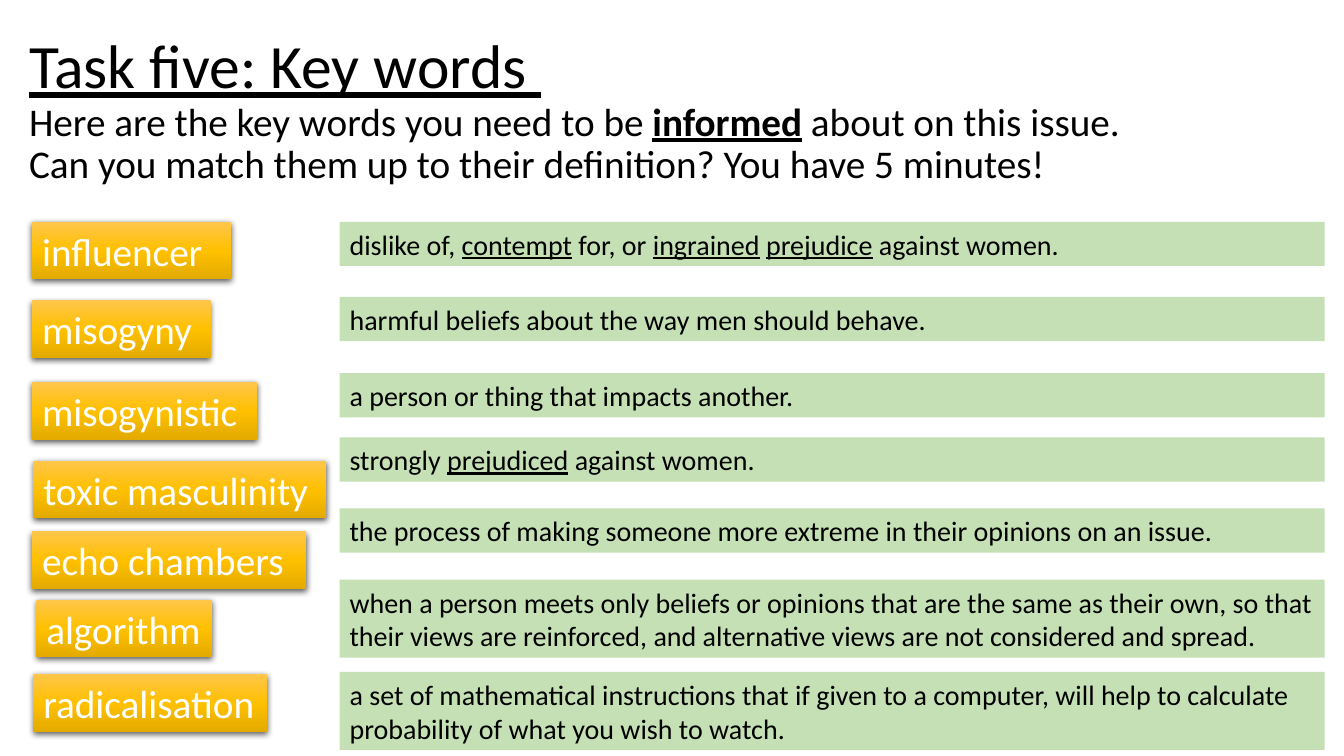
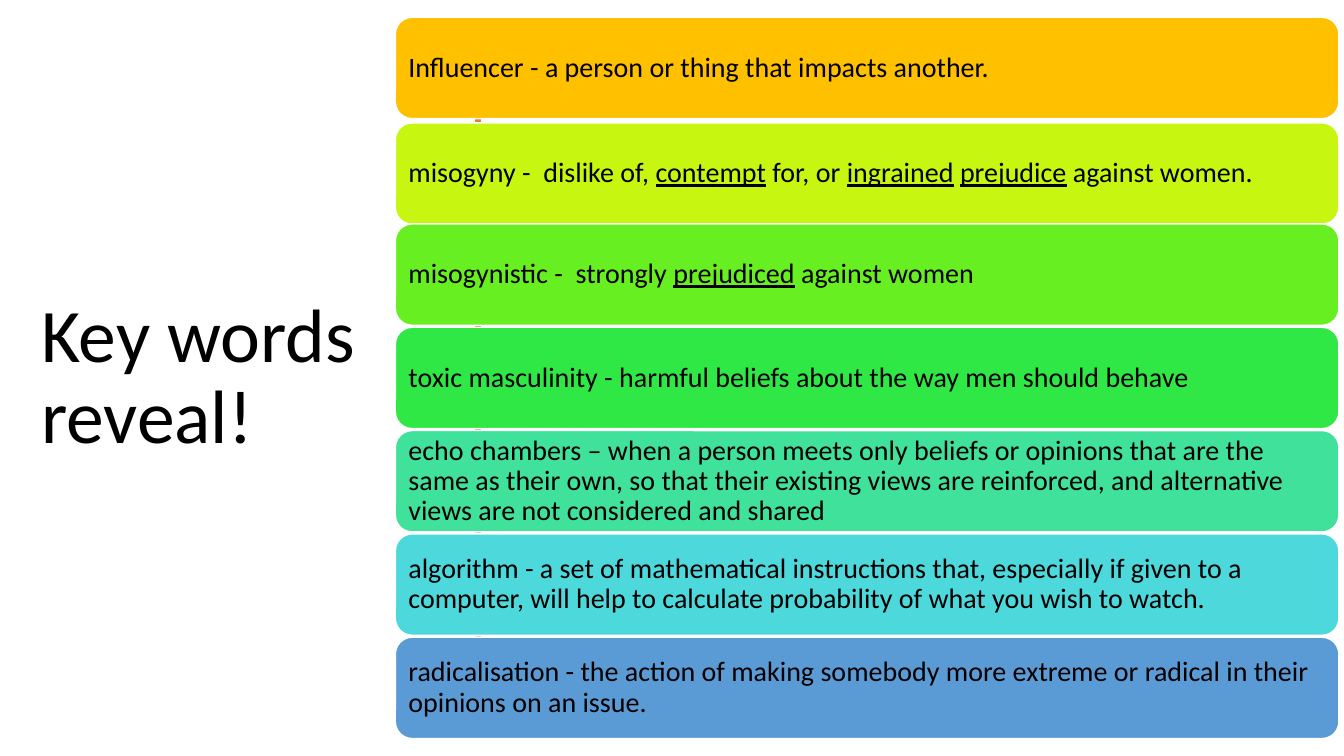
from lxml import etree
from copy import deepcopy
from pptx import Presentation
from pptx.dml.color import RGBColor
from pptx.enum.shapes import MSO_CONNECTOR, MSO_SHAPE
from pptx.enum.text import MSO_ANCHOR, PP_ALIGN
from pptx.oxml import parse_xml
from pptx.oxml.ns import qn
from pptx.util import Pt

FONT = "Calibri"
BLACK = RGBColor(0, 0, 0)
WHITE = RGBColor(255, 255, 255)
ORANGE = RGBColor(0xED, 0x7D, 0x31)
GREEN = RGBColor(0xC5, 0xE0, 0xB4)
AMBERS = [(0, RGBColor(0xFF, 0xC6, 0x4B)), (0.5, RGBColor(0xFF, 0xC0, 0)),
          (1, RGBColor(0xE3, 0xAB, 0))]

SHADOW = """<a:outerShdw xmlns:a="http://schemas.openxmlformats.org/drawingml/2006/main"
 blurRad="57150" dist="19050" dir="5400000" algn="ctr" rotWithShape="0">
 <a:srgbClr val="000000"><a:alpha val="63000"/></a:srgbClr></a:outerShdw>"""

TASK_TITLE = "_Task five: Key words _\n"
TASK_TEXT = ("Here are the key words you need to be _informed_ about on this issue. \n"
             "Can you match them up to their definition? You have 5 minutes!")

TERMS = [
    ("influencer", 23, 158.4, 142),
    ("misogyny", 23, 214.6, 127.5),
    ("misogynistic", 23, 272.9, 160.5),
    ("toxic masculinity", 23.8, 329.2, 209),
    ("echo chambers", 23, 379.6, 196),
    ("algorithm", 26, 428.4, 125.3),
    ("radicalisation", 23.8, 481.5, 167),
]

DEFINITIONS = [
    (158.4, 1, "dislike of, _contempt_ for, or _ingrained_ _prejudice_ against women."),
    (212, 1, "harmful beliefs about the way men should behave."),
    (266.6, 1, "a person or thing that impacts another."),
    (312.4, 1, "strongly _prejudiced_ against women."),
    (363.2, 1, "the process of making someone more extreme in their opinions on an issue."),
    (414, 2, "when a person meets only beliefs or opinions that are the same as their own, "
             "so that their views are reinforced, and alternative views are not considered and spread."),
    (480, 2, "a set of mathematical instructions that if given to a computer, "
             "will help to calculate probability of what you wish to watch."),
]

ANSWERS = [
    (12.4, "FFC000", "Influencer - a person or thing that impacts another."),
    (87.8, "C7F711", "misogyny -  dislike of, _contempt_ for, or _ingrained_ _prejudice_ against women."),
    (160, "67EF21", "misogynistic -  strongly _prejudiced_ against women"),
    (233.8, "30E845", "toxic masculinity - harmful beliefs about the way men should behave"),
    (307.6, "3FE19B", "echo chambers – when a person meets only beliefs or opinions that are the same "
                      "as their own, so that their existing views are reinforced, and alternative views "
                      "are not considered and shared"),
    (381.4, "4DD8DB", "algorithm - a set of mathematical instructions that, especially if given to a "
                      "computer, will help to calculate probability of what you wish to watch."),
    (455.2, "5B9BD5", "radicalisation - the action of making somebody more extreme or radical in their "
                      "opinions on an issue."),
]


def write(p, text, size, color=BLACK):
    for i, line in enumerate(text.split("\n")):
        if i:
            p.add_line_break()
        for j, part in enumerate(line.split("_")):
            if part:
                r = p.add_run()
                r.text = part
                r.font.name, r.font.size = FONT, Pt(size)
                r.font.color.rgb = color
                r.font.underline = j % 2 == 1


def add_title(s, box, parts):
    tf = s.shapes.add_textbox(*map(Pt, box)).text_frame
    tf.word_wrap = True
    tf.vertical_anchor = MSO_ANCHOR.MIDDLE
    p = tf.paragraphs[0]
    p.line_spacing = 0.9
    for text, size in parts:
        write(p, text, size)
    return p


def add_box(s, kind, box, text, size, color=BLACK):
    sp = s.shapes.add_shape(kind, *map(Pt, box))
    sp.shadow.inherit = False
    sp.line.fill.background()
    sp.text_frame.word_wrap = True
    p = sp.text_frame.paragraphs[0]
    p.alignment = PP_ALIGN.LEFT
    write(p, text, size, color)
    return sp


def style_term(sp):
    fill = sp.fill
    fill.gradient()
    fill.gradient_angle = 270
    stops = sp._element.spPr.find(qn("a:gradFill")).find(qn("a:gsLst"))
    stops.append(deepcopy(stops[0]))
    for stop, (position, color) in zip(fill.gradient_stops, AMBERS):
        stop.position = position
        stop.color.rgb = color
    sp._element.spPr.find(qn("a:effectLst")).append(parse_xml(SHADOW))
    sp.text_frame.margin_right = 0


def build_task(prs):
    s = prs.slides.add_slide(prs.slide_layouts[6])
    p = add_title(s, (13.7, -5.8, 979, 170.6), [(TASK_TITLE, 44), (TASK_TEXT, 28)])
    for r in p.runs:
        r.font.bold = r.text == "informed"
    for term, left, top, width in TERMS:
        style_term(add_box(s, MSO_SHAPE.RECTANGLE, (left, top, width, 41.2), term, 28, WHITE))
    for top, lines, text in DEFINITIONS:
        sp = add_box(s, MSO_SHAPE.RECTANGLE, (242.6, top, 703.6, 7.5 + 24.1 * lines), text, 20)
        sp.fill.solid()
        sp.fill.fore_color.rgb = GREEN


def build_reveal(prs):
    s = prs.slides.add_slide(prs.slide_layouts[6])
    add_title(s, (22.3, 50.4, 269.3, 440), [("Key words\nreveal!", 54)])
    rule = s.shapes.add_connector(MSO_CONNECTOR.STRAIGHT, Pt(341.5), Pt(60.5), Pt(341.5), Pt(486.5))
    rule.line.color.rgb = ORANGE
    rule.line.width = Pt(4.5)
    etree.SubElement(rule._element.spPr, qn("a:effectLst"))
    for top, color, text in ANSWERS:
        sp = add_box(s, MSO_SHAPE.ROUNDED_RECTANGLE, (282.4, top, 674, 72.4), text, 20)
        sp.fill.solid()
        sp.fill.fore_color.rgb = RGBColor.from_string(color)
        sp.line.color.rgb = WHITE
        sp.line.width = Pt(1)
        tf = sp.text_frame
        tf.vertical_anchor = MSO_ANCHOR.MIDDLE
        tf.margin_left = tf.margin_right = Pt(5.8)
        tf.margin_top = tf.margin_bottom = 0
        tf.paragraphs[0].line_spacing = 0.9


def main():
    prs = Presentation()
    prs.slide_width, prs.slide_height = Pt(960), Pt(540)
    build_task(prs)
    build_reveal(prs)
    prs.save("out.pptx")


if __name__ == "__main__":
    main()
